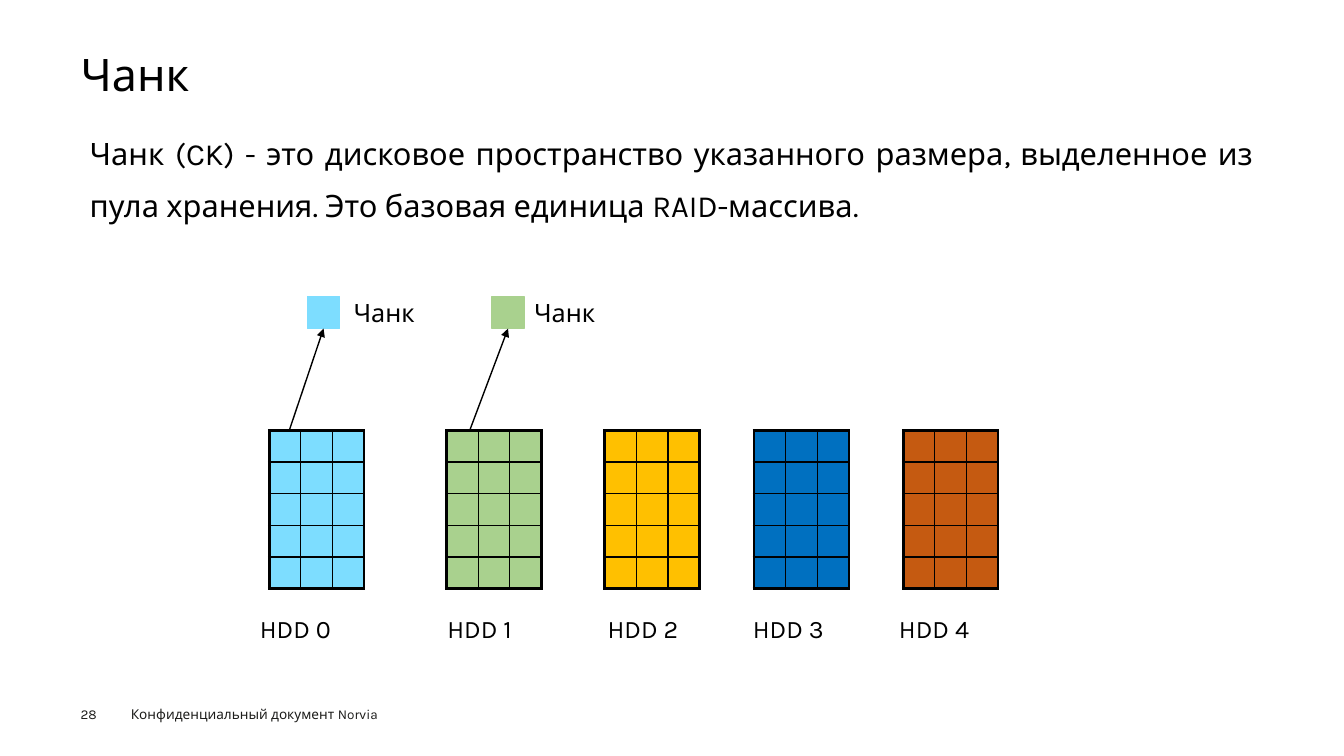
import lxml.etree
import pptx
import pptx.dml.color
import pptx.enum.shapes
import pptx.enum.text
import pptx.oxml.ns
import pptx.util

UNIT = 0.1
CELL = 3.14
ROWS, COLS = 5, 3
DISKS = [
    (26.7, 24.8, "7DDDFF"),
    (44.3, 43.4, "A9D18E"),
    (60, 59.3, "FFC000"),
    (74.8, 73.7, "0070C0"),
    (89.6, 88.2, "C55A11"),
]
CHUNKS = [(30.5, 34.1, 28.7, "7DDDFF"), (48.8, 52, 46.6, "A9D18E")]


def size(num):
    return pptx.util.Inches(num * UNIT)


def tint(code):
    return pptx.dml.color.RGBColor.from_string(code)


def node(root, tag, **attrs):
    return lxml.etree.SubElement(root, pptx.oxml.ns.qn(tag), **attrs)


class Deck:
    """Holds the style and the current slide, with lengths in grid columns and rows."""

    def __init__(self):
        self.show = pptx.Presentation()
        self.show.slide_width = size(133.33)
        self.show.slide_height = size(75)
        self.font = "Karla"
        self.ink = "000000"
        self.slide = self.show.slides.add_slide(self.show.slide_layouts[1])

    def words(self, para, text, points, ink=None):
        run = para.add_run()
        run.text = text
        run.font.name = self.font
        run.font.size = pptx.util.Pt(points)
        run.font.color.rgb = tint(ink or self.ink)

    def inset(self, frame, across, down):
        frame.margin_left = frame.margin_right = size(across)
        frame.margin_top = frame.margin_bottom = size(down)

    def place(self, shape, box):
        shape.left, shape.top, shape.width, shape.height = map(size, box)

    def title(self, text, box):
        shape = self.slide.shapes.title
        self.place(shape, box)
        frame = shape.text_frame
        self.inset(frame, 0, 0)
        frame.vertical_anchor = pptx.enum.text.MSO_ANCHOR.MIDDLE
        para = frame.paragraphs[0]
        para.alignment = pptx.enum.text.PP_ALIGN.LEFT
        para.line_spacing = 0.9
        self.words(para, text, 32)

    def body(self, text, box):
        shape = self.slide.placeholders[1]
        self.place(shape, box)
        self.inset(shape.text_frame, 0.9, 0.4)
        para = shape.text_frame.paragraphs[0]
        para.alignment = pptx.enum.text.PP_ALIGN.JUSTIFY
        para.line_spacing = 1.4
        para.space_before = pptx.util.Pt(0)
        props = para._p.get_or_add_pPr()
        props.set("marL", "0")
        props.set("indent", "0")
        node(props, "a:buNone")
        self.words(para, text, 22)

    def label(self, text, box, points=18, ink=None, pad=(1, 0.5)):
        frame = self.slide.shapes.add_textbox(*map(size, box)).text_frame
        frame.word_wrap = True
        self.inset(frame, *pad)
        self.words(frame.paragraphs[0], text, points, ink)

    def edge(self, cell, tag, points):
        width = str(pptx.util.Pt(points))
        line = node(cell._tc.get_or_add_tcPr(), tag, w=width)
        node(node(line, "a:solidFill"), "a:srgbClr", val=self.ink)

    def disk(self, left, top, code):
        box = (left, top, COLS * CELL, ROWS * CELL)
        table = self.slide.shapes.add_table(ROWS, COLS, *map(size, box)).table
        table.first_row = table.horz_banding = False
        for row in range(ROWS):
            for col in range(COLS):
                cell = table.cell(row, col)
                self.inset(cell, 0, 0)
                node(cell.text_frame.paragraphs[0]._p, "a:endParaRPr", sz="800")
                sides = {
                    "a:lnL": col == 0,
                    "a:lnR": col == COLS - 1,
                    "a:lnT": row == 0,
                    "a:lnB": row == ROWS - 1,
                }
                for tag, outer in sides.items():
                    self.edge(cell, tag, 2.25 if outer else 1)
                cell.fill.solid()
                cell.fill.fore_color.rgb = tint(code)

    def square(self, left, top, side, code):
        kind = pptx.enum.shapes.MSO_SHAPE.RECTANGLE
        shape = self.slide.shapes.add_shape(kind, *map(size, (left, top, side, side)))
        shape.shadow.inherit = False
        shape.fill.solid()
        shape.fill.fore_color.rgb = tint(code)
        shape.line.color.rgb = tint(code)
        shape.line.width = pptx.util.Pt(1)
        return shape

    def arrow(self, left, top, goal):
        kind = pptx.enum.shapes.MSO_CONNECTOR.STRAIGHT
        start = (size(left), size(top))
        line = self.slide.shapes.add_connector(kind, *start, *start)
        line.end_connect(goal, 2)
        line.line.color.rgb = tint(self.ink)
        line.line.width = pptx.util.Pt(1)
        node(line.line._get_or_add_ln(), "a:tailEnd", type="triangle")
        node(line._element.spPr, "a:effectLst")


def main():
    deck = Deck()
    deck.label("Конфиденциальный документ Norvia", (12, 69.5, 28.6, 2.6), 9.7, "1D1D1B")
    deck.label("28", (8, 70, 5.5, 1.6), 9.7, "1D1D1B", (0, 0))
    deck.title("Чанк", (8, 4.9, 117.3, 5.4))
    deck.body(
        "Чанк (CK) - это дисковое пространство указанного размера, "
        "выделенное из пула хранения. Это базовая единица RAID-массива.",
        (8, 11.5, 117.3, 53.3),
    )
    for num, (left, name, code) in enumerate(DISKS):
        deck.disk(left, 42.7, code)
        deck.label(f"HDD {num}", (name, 60.4, 11, 4.4))
    for left, name, start, code in CHUNKS:
        goal = deck.square(left, 29.4, 3.2, code)
        deck.label("Чанк", (name, 29, 9.3, 4))
        deck.arrow(start, 42.7, goal)
    deck.show.save("out.pptx")


if __name__ == "__main__":
    main()
